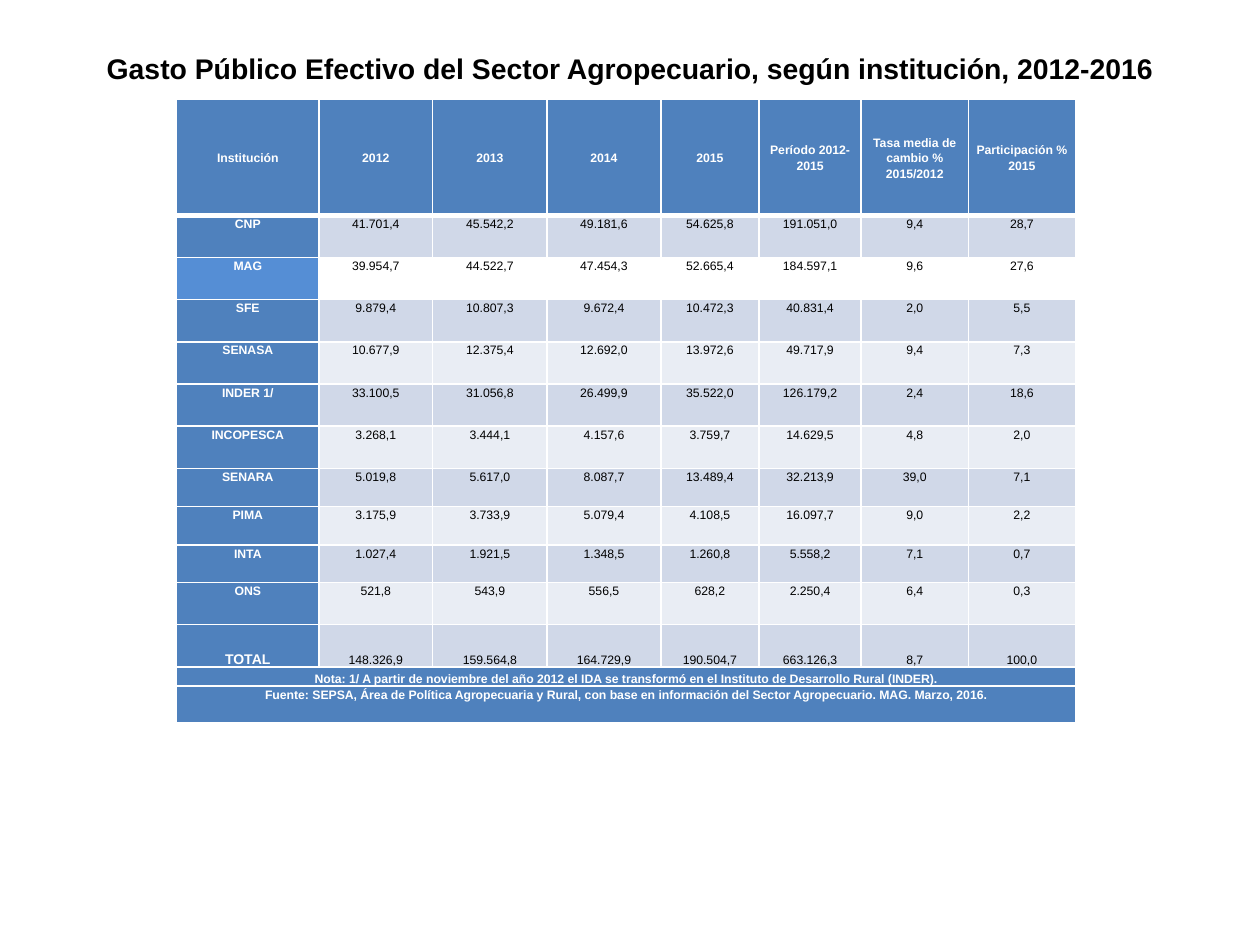
from dataclasses import dataclass

from lxml import etree
from pptx import Presentation
from pptx.dml.color import RGBColor
from pptx.enum.text import MSO_ANCHOR, PP_ALIGN
from pptx.oxml.ns import qn
from pptx.util import Cm, Pt

CENTER = PP_ALIGN.CENTER
TOP, MIDDLE, BOTTOM = MSO_ANCHOR.TOP, MSO_ANCHOR.MIDDLE, MSO_ANCHOR.BOTTOM


@dataclass(frozen=True)
class Theme:
    font: str = "Arial"
    ink: str = "000000"
    light: str = "FFFFFF"
    header: str = "4F81BD"
    highlight: str = "558ED5"
    band_dark: str = "D0D8E8"
    band_light: str = "E9EDF4"
    title_size: float = 16.2
    total_size: float = 8
    body_size: float = 7
    line_spacing: float = 1.15
    rule: float = 1
    heavy_rule: float = 3


HEADINGS = ["Institución", "2012", "2013", "2014", "2015", "Período 2012-2015",
            "Tasa media de cambio % 2015/2012", "Participación % 2015"]
SPENDING = [
    ["CNP", "41.701,4", "45.542,2", "49.181,6", "54.625,8", "191.051,0", "9,4", "28,7"],
    ["MAG", "39.954,7", "44.522,7", "47.454,3", "52.665,4", "184.597,1", "9,6", "27,6"],
    ["SFE", "9.879,4", "10.807,3", "9.672,4", "10.472,3", "40.831,4", "2,0", "5,5"],
    ["SENASA", "10.677,9", "12.375,4", "12.692,0", "13.972,6", "49.717,9", "9,4", "7,3"],
    ["INDER 1/", "33.100,5", "31.056,8", "26.499,9", "35.522,0", "126.179,2", "2,4", "18,6"],
    ["INCOPESCA", "3.268,1", "3.444,1", "4.157,6", "3.759,7", "14.629,5", "4,8", "2,0"],
    ["SENARA", "5.019,8", "5.617,0", "8.087,7", "13.489,4", "32.213,9", "39,0", "7,1"],
    ["PIMA", "3.175,9", "3.733,9", "5.079,4", "4.108,5", "16.097,7", "9,0", "2,2"],
    ["INTA", "1.027,4", "1.921,5", "1.348,5", "1.260,8", "5.558,2", "7,1", "0,7"],
    ["ONS", "521,8", "543,9", "556,5", "628,2", "2.250,4", "6,4", "0,3"],
    ["TOTAL", "148.326,9", "159.564,8", "164.729,9", "190.504,7", "663.126,3", "8,7", "100,0"],
]
NOTES = [
    "Nota: 1/ A partir de noviembre del año 2012 el IDA se transformó en el "
    "Instituto de Desarrollo Rural (INDER).",
    "Fuente: SEPSA, Área de Política Agropecuaria y Rural, con base en información "
    "del Sector Agropecuario. MAG. Marzo, 2016.",
]
COLUMN_WIDTHS = [2.87, 2.29, 2.31, 2.29, 1.98, 2.06, 2.16, 2.16]
ROW_HEIGHTS = [2.33] + [0.85] * 6 + [0.77, 0.78, 0.75, 0.85, 0.86, 0.38, 0.74]


class SlideBuilder:
    def __init__(self, slide, theme):
        self.slide = slide
        self.theme = theme

    def add_text(self, frame, text, size, color, bold):
        paragraph = frame.paragraphs[0]
        paragraph.alignment = CENTER
        run = paragraph.add_run()
        run.text = text
        run.font.name = self.theme.font
        run.font.size = Pt(size)
        run.font.bold = bold
        run.font.color.rgb = RGBColor.from_string(color)
        return paragraph

    def title(self, text, left, top, width, height):
        frame = self.slide.shapes.add_textbox(
            Cm(left), Cm(top), Cm(width), Cm(height)).text_frame
        frame.word_wrap = True
        frame.vertical_anchor = MIDDLE
        self.add_text(frame, text, self.theme.title_size, self.theme.ink, True)

    def table(self, left, top, widths, heights):
        table = self.slide.shapes.add_table(
            len(heights), len(widths), Cm(left), Cm(top),
            Cm(sum(widths)), Cm(sum(heights))).table
        table.first_row = table.horz_banding = False
        for column, width in zip(table.columns, widths):
            column.width = Cm(width)
        for row, height in zip(table.rows, heights):
            row.height = Cm(height)
        return table

    def borders(self, cell, top, bottom):
        rule = self.theme.rule
        properties = cell._tc.get_or_add_tcPr()
        for side, width in (("L", rule), ("R", rule), ("T", top), ("B", bottom)):
            line = etree.SubElement(properties, qn(f"a:ln{side}"), w=str(Pt(width)))
            fill = etree.SubElement(line, qn("a:solidFill"))
            etree.SubElement(fill, qn("a:srgbClr"), val=self.theme.light)

    def cell(self, cell, text, fill, anchor, heading, size, top, bottom):
        self.borders(cell, top, bottom)
        cell.margin_left = cell.margin_right = Cm(0.13)
        cell.margin_top = cell.margin_bottom = 0
        cell.vertical_anchor = anchor
        if fill:
            cell.fill.solid()
            cell.fill.fore_color.rgb = RGBColor.from_string(fill)
        else:
            cell.fill.background()
        if text:
            color = self.theme.light if heading else self.theme.ink
            paragraph = self.add_text(cell.text_frame, text, size, color, heading)
            paragraph.line_spacing = self.theme.line_spacing

    def spending_table(self, left, top):
        theme = self.theme
        table = self.table(left, top, COLUMN_WIDTHS, ROW_HEIGHTS)
        note_rows = [[note] + [""] * (len(HEADINGS) - 1) for note in NOTES]
        rows = [HEADINGS] + SPENDING + note_rows
        total_row = len(SPENDING)
        anchors = {0: MIDDLE, total_row: BOTTOM, total_row + 1: BOTTOM}

        for r, values in enumerate(rows):
            is_mag = values[0] == "MAG"
            is_body = 1 <= r <= total_row
            band = theme.band_dark if r % 2 else theme.band_light
            for c, text in enumerate(values):
                heading = c == 0 or not is_body
                if heading:
                    fill = theme.highlight if is_mag else theme.header
                else:
                    fill = None if is_mag else band
                size = theme.total_size if text == "TOTAL" else theme.body_size
                self.cell(table.cell(r, c), text, fill, anchors.get(r, TOP), heading, size,
                          top=theme.heavy_rule if r == 1 else theme.rule,
                          bottom=theme.heavy_rule if r == 0 else theme.rule)

        # Notes run across the whole table
        for r in range(total_row + 1, len(rows)):
            table.cell(r, 0).merge(table.cell(r, len(HEADINGS) - 1))


def main():
    deck = Presentation()
    deck.slide_width, deck.slide_height = Cm(25.4), Cm(19.05)
    builder = SlideBuilder(deck.slides.add_slide(deck.slide_layouts[6]), Theme())

    # Title
    builder.title("Gasto Público Efectivo del Sector Agropecuario, según institución, 2012-2016",
                  1.27, 0.76, 22.86, 1.24)

    # Spending by institution
    builder.spending_table(3.56, 2.01)

    deck.save("out.pptx")


if __name__ == "__main__":
    main()
